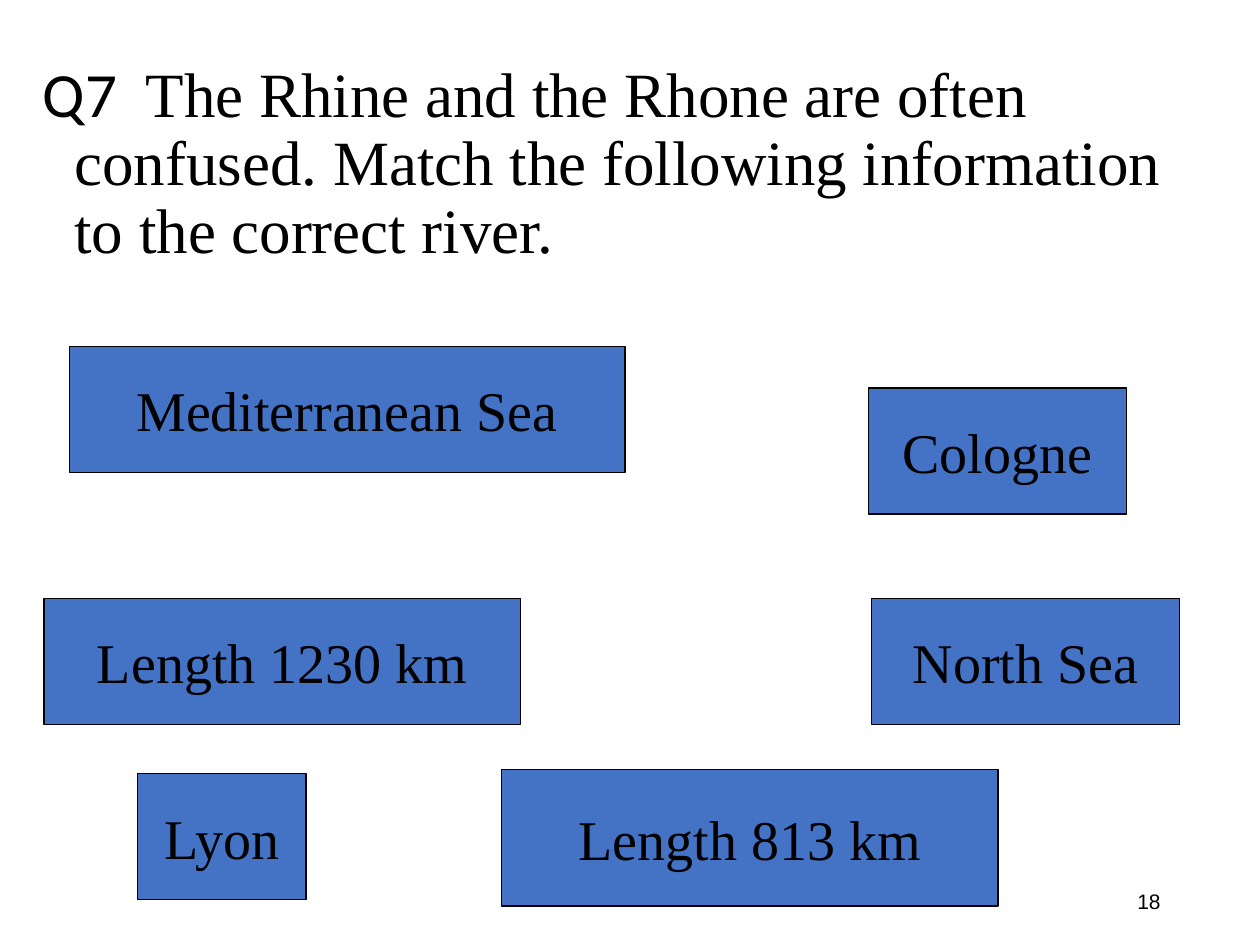
from pptx import Presentation
from pptx.dml.color import RGBColor
from pptx.enum import shapes, text
from pptx.util import Pt

BLACK = RGBColor(0x00, 0x00, 0x00)
BLUE = RGBColor(0x44, 0x72, 0xC4)
SERIF = "Times New Roman"


def add_run(paragraph, words, font, size):
    run = paragraph.add_run()
    run.text = words
    run.font.name = font
    run.font.size = Pt(size)
    run.font.color.rgb = BLACK


deck = Presentation()
deck.slide_width, deck.slide_height = Pt(720), Pt(540)
slide = deck.slides.add_slide(deck.slide_layouts[5])

question = slide.shapes.title
question.left, question.top = Pt(17.3), Pt(32.4)
question.width, question.height = Pt(663.1), Pt(364.3)
question_frame = question.text_frame
question_frame.word_wrap = True
question_frame.auto_size = text.MSO_AUTO_SIZE.NONE
question_frame.vertical_anchor = text.MSO_ANCHOR.TOP
wording = question_frame.paragraphs[0]
wording.alignment = text.PP_ALIGN.LEFT
wording.line_spacing = 0.9
wording.space_before = Pt(10)
indents = wording._p.get_or_add_pPr()
indents.set("marL", str(Pt(18)))
indents.set("indent", str(Pt(-18)))
add_run(wording, "Q7  ", "Calibri", 36)
add_run(
    wording,
    "The Rhine and the Rhone are often confused. "
    "Match the following information to the correct river.",
    SERIF,
    36,
)

page_number = slide.shapes.add_textbox(Pt(508.3), Pt(500.4), Pt(162), Pt(28.8))
page_number.text_frame.word_wrap = True
page_number.text_frame.vertical_anchor = text.MSO_ANCHOR.MIDDLE
page_line = page_number.text_frame.paragraphs[0]
page_line.alignment = text.PP_ALIGN.RIGHT
add_run(page_line, "18", "Arial", 12)

clues = [
    ("North Sea", 498.2, 342, 175.7, 72),
    ("Length 813 km", 286.6, 439.9, 283.7, 77.8),
    ("Lyon", 78.5, 442.1, 96.5, 72),
    ("Cologne", 496.1, 221.8, 147.6, 72),
    ("Mediterranean Sea", 39.6, 198, 317.5, 72),
    ("Length 1230 km", 25.2, 342, 272.2, 72),
]
for clue, left, top, width, height in clues:
    card = slide.shapes.add_shape(
        shapes.MSO_SHAPE.RECTANGLE, Pt(left), Pt(top), Pt(width), Pt(height)
    )
    card.shadow.inherit = False
    card.fill.solid()
    card.fill.fore_color.rgb = BLUE
    card.line.color.rgb = BLACK
    card.line.width = Pt(0.75)
    card.text_frame.word_wrap = False
    card.text_frame.vertical_anchor = text.MSO_ANCHOR.MIDDLE
    label = card.text_frame.paragraphs[0]
    label.alignment = text.PP_ALIGN.CENTER
    add_run(label, clue, SERIF, 32)

deck.save("out.pptx")
